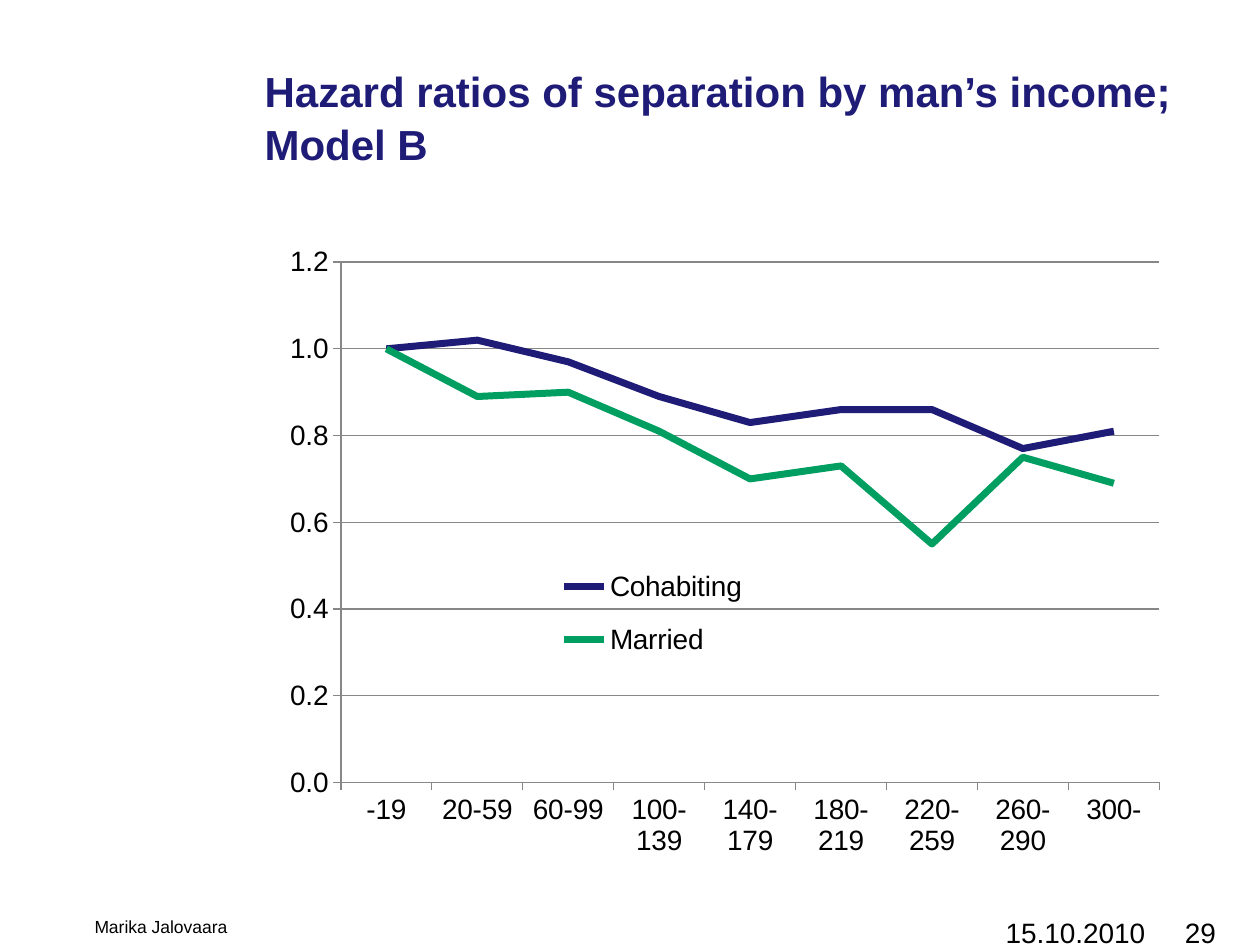
from dataclasses import dataclass

from lxml import etree
from pptx import Presentation
from pptx.chart.data import CategoryChartData
from pptx.dml.color import RGBColor
from pptx.enum.chart import XL_CHART_TYPE, XL_LEGEND_POSITION, XL_MARKER_STYLE, XL_TICK_MARK
from pptx.enum.text import MSO_ANCHOR, MSO_AUTO_SIZE, PP_ALIGN
from pptx.oxml.ns import qn
from pptx.util import Inches, Pt

LINE = XL_CHART_TYPE.LINE
RIGHT_SIDE = XL_LEGEND_POSITION.RIGHT
PLAIN = XL_MARKER_STYLE.NONE
OUTSIDE = XL_TICK_MARK.OUTSIDE
NO_TICK = XL_TICK_MARK.NONE
LEFT, RIGHT = PP_ALIGN.LEFT, PP_ALIGN.RIGHT
TOP, BOTTOM = MSO_ANCHOR.TOP, MSO_ANCHOR.BOTTOM
FIXED = MSO_AUTO_SIZE.NONE

BANDS = ["-19", "20-59", "60-99", "100-139", "140-179", "180-219", "220-259", "260-290", "300-"]
RATIOS = {
    "Cohabiting": [1, 1.02, 0.97, 0.89, 0.83, 0.86, 0.86, 0.77, 0.81],
    "Married": [1, 0.89, 0.9, 0.81, 0.7, 0.73, 0.55, 0.75, 0.69],
}


@dataclass(frozen=True)
class Theme:
    face: str = "Arial"
    ink: str = "000000"
    navy: str = "1E1C77"
    green: str = "009E60"
    grid: str = "878787"
    head: int = 24
    body: int = 16
    small: int = 10


def rgb(code):
    return RGBColor.from_string(code)


def style(font, face, size, color, bold=False):
    font.name = face
    font.size = Pt(size)
    font.color.rgb = rgb(color)
    font.bold = bold


def write(frame, text, face, size, color, bold=False, align=LEFT, anchor=TOP, lead=None):
    frame.word_wrap = True
    frame.auto_size = FIXED
    frame.vertical_anchor = anchor
    para = frame.paragraphs[0]
    para.alignment = align
    if lead:
        para.line_spacing = Pt(lead)
    run = para.add_run()
    run.text = text
    style(run.font, face, size, color, bold)


def place(part, index, **parts):
    old = part.find(qn("c:layout"))
    if old is not None:
        part.remove(old)
    layout = etree.Element(qn("c:layout"))
    part.insert(index, layout)
    manual = etree.SubElement(layout, qn("c:manualLayout"))
    for tag, value in parts.items():
        etree.SubElement(manual, qn(f"c:{tag}")).set("val", str(value))


class Deck:
    def __init__(self, theme):
        self.theme = theme
        self.file = Presentation()
        self.file.slide_width = Inches(10)
        self.file.slide_height = Inches(7.5)
        self.slide = self.file.slides.add_slide(self.file.slide_layouts[5])

    def title(self, text, left, top, width, height):
        shape = self.slide.shapes.title
        shape.left, shape.top = Inches(left), Inches(top)
        shape.width, shape.height = Inches(width), Inches(height)
        write(shape.text_frame, text, self.theme.face, self.theme.head, self.theme.navy,
              bold=True, anchor=BOTTOM, lead=30)

    def footer(self, text, left, width, size, align):
        box = self.slide.shapes.add_textbox(
            Inches(left), Inches(7.22), Inches(width), Inches(0.22))
        frame = box.text_frame
        frame.margin_left = frame.margin_right = 0
        write(frame, text, self.theme.face, size, self.theme.ink, align=align)

    def chart(self, cats, rows, left, top, width, height):
        theme = self.theme
        data = CategoryChartData(number_format="0.00")
        data.categories = cats
        for name, values in rows.items():
            data.add_series(name, values)
        chart = self.slide.shapes.add_chart(
            LINE, Inches(left), Inches(top), Inches(width), Inches(height), data).chart
        style(chart.font, theme.face, theme.body, theme.ink)
        chart.has_title = False
        chart.plots[0].vary_by_categories = False
        for line, color in zip(chart.plots[0].series, (theme.navy, theme.green)):
            line.smooth = False
            line.marker.style = PLAIN
            line.format.line.color.rgb = rgb(color)
            line.format.line.width = Pt(4)
        self.axes(chart)
        self.legend(chart)
        area = chart.plots[0]._element.getparent()
        place(area, 0, layoutTarget="inner", xMode="edge", yMode="edge",
              x=0.092, y=0.061, w=0.847, h=0.762)

    def axes(self, chart):
        scale = chart.value_axis
        scale.minimum_scale, scale.maximum_scale, scale.major_unit = 0, 1.2, 0.2
        scale.tick_labels.number_format = "0.0"
        scale.tick_labels.number_format_is_linked = False
        scale.has_major_gridlines = True
        rules = [scale.major_gridlines.format.line]
        for axis in (scale, chart.category_axis):
            axis.major_tick_mark = OUTSIDE
            axis.minor_tick_mark = NO_TICK
            rules.append(axis.format.line)
        for rule in rules:
            rule.color.rgb = rgb(self.theme.grid)
            rule.width = Pt(0.75)

    def legend(self, chart):
        chart.has_legend = True
        key = chart.legend
        key.position = RIGHT_SIDE
        key.include_in_layout = False
        style(key.font, self.theme.face, self.theme.body, self.theme.ink)
        place(key._element, 1, xMode="edge", yMode="edge", x=0.29, y=0.48, w=0.25, h=0.19)


def main():
    theme = Theme()
    deck = Deck(theme)
    deck.title("Hazard ratios of separation by man’s income; Model B", 2, 0.17, 7.67, 1.22)
    deck.footer("15.10.2010", 7.64, 1.45, theme.body, RIGHT)
    deck.footer("Marika Jalovaara", 0.75, 6.85, theme.small, LEFT)
    deck.footer("29", 9.1, 0.55, theme.body, RIGHT)
    deck.chart(BANDS, RATIOS, 2, 1.75, 7.67, 5.42)
    deck.file.save("out.pptx")


if __name__ == "__main__":
    main()
